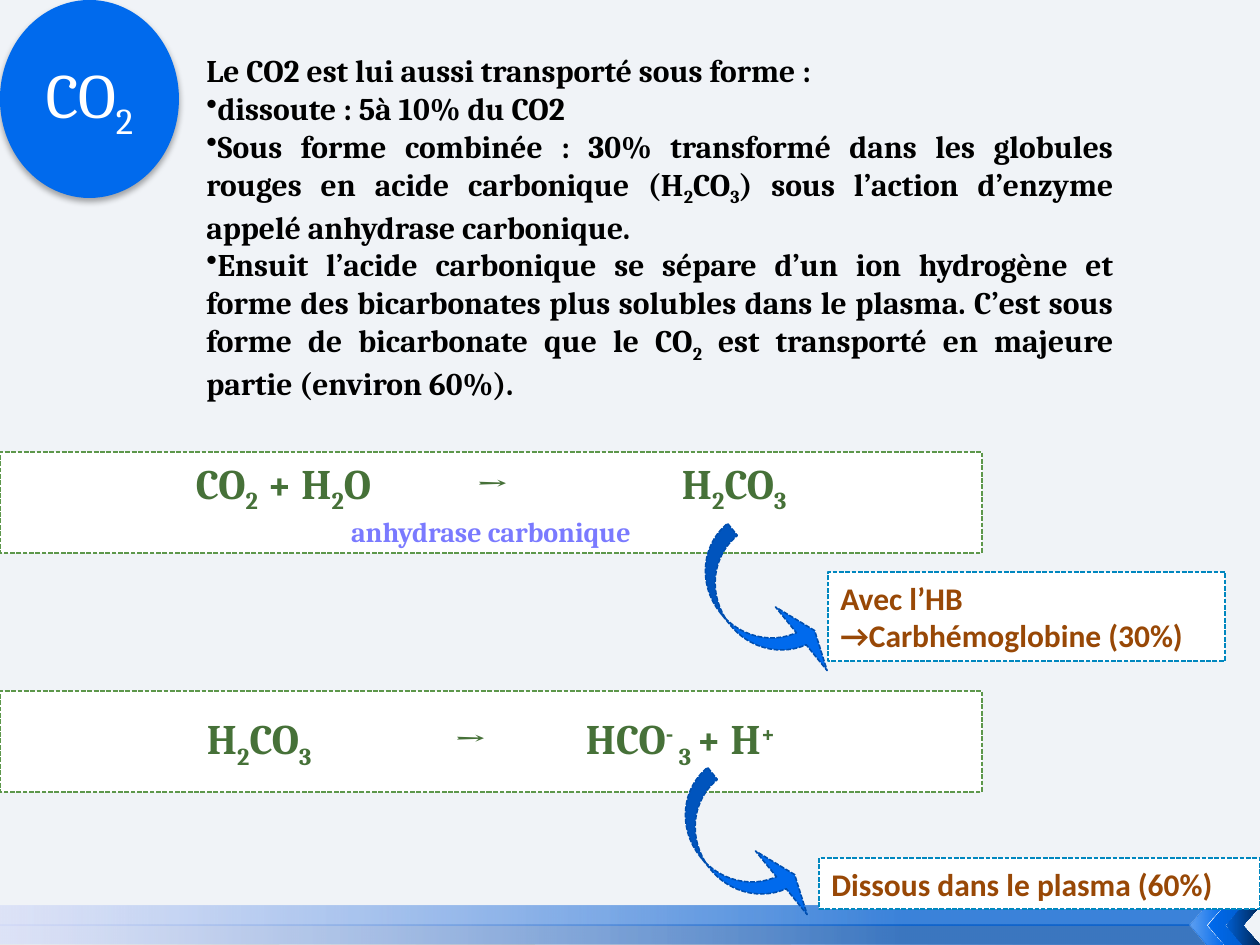
from dataclasses import dataclass
from typing import NamedTuple, Optional

from lxml import etree
from pptx import Presentation
from pptx import util as u
from pptx.dml.color import RGBColor
from pptx.enum import dml, shapes, text
from pptx.oxml import ns

EMU_PER_PX = 914400 / 126
PAGE_WIDTH, PAGE_HEIGHT = 1260, 945


@dataclass(frozen=True)
class Theme:
    page: str = "F0F3F7"
    white: str = "FFFFFF"
    ink: str = "000000"
    blue: str = "006AED"
    blue_mid: str = "005ED1"
    blue_dark: str = "004EAF"
    navy: str = "002757"
    pale: str = "CCD4F8"
    green: str = "467138"
    green_line: str = "5D974B"
    enzyme: str = "7A7AFF"
    brown: str = "984806"
    cyan_line: str = "0087BF"
    serif: str = "Cambria"
    sans: str = "Calibri"
    badge_size: int = 36
    equation_size: int = 24
    body_size: int = 18
    enzyme_size: int = 16


THEME = Theme()


class Rect(NamedTuple):
    left: int
    top: int
    width: int
    height: int


class Stop(NamedTuple):
    position: float
    color: str
    alpha: int = 100


class Ribbon(NamedTuple):
    outer_left: int
    outer_right: int
    color: str


class Equation(NamedTuple):
    rect: Rect
    formula: str
    tabs: tuple
    enzyme: Optional[str] = None


class Outcome(NamedTuple):
    rect: Rect
    label: str
    arrow: Rect


def px(value: float) -> u.Emu:
    return u.Emu(round(value * EMU_PER_PX))


def rgb(value: str) -> RGBColor:
    return RGBColor.from_string(value)


def add_element(parent, tag: str, **attributes):
    element = etree.SubElement(parent, ns.qn(tag))
    for name, value in attributes.items():
        element.set(name, str(value))
    return element


def add_shape(page, kind, rect: Rect, fill: Optional[str] = None,
              line: Optional[str] = None):
    shape = page.shapes.add_shape(kind, *map(px, rect))
    shape.shadow.inherit = False
    if fill:
        shape.fill.solid()
        shape.fill.fore_color.rgb = rgb(fill)
    if line:
        shape.line.color.rgb = rgb(line)
        shape.line.width = u.Pt(0.9)
        shape.line.dash_style = dml.MSO_LINE.SQUARE_DOT
    else:
        shape.line.fill.background()
    return shape


def set_gradient(shape, *stops: Stop) -> None:
    shape.fill.gradient()
    shape.fill.gradient_angle = 180
    for target, stop in zip(shape.fill.gradient_stops, stops):
        target.position = stop.position
        target.color.rgb = rgb(stop.color)
    for color, stop in zip(shape.element.spPr.iter(ns.qn("a:srgbClr")), stops):
        if stop.alpha < 100:
            add_element(color, "a:alpha", val=stop.alpha * 1000)


def set_frame(box, anchor=text.MSO_ANCHOR.MIDDLE):
    frame = box.text_frame
    frame.word_wrap = True
    frame.vertical_anchor = anchor
    return frame


def write(para, content: str, *, size: int, color: str, font: str = THEME.serif,
          bold: bool = True, align=text.PP_ALIGN.LEFT, bullet: bool = False,
          tabs: tuple = ()) -> None:
    """Bars separate spans; a span opening with _ is lowered, with ^ raised."""
    para.alignment = align
    properties = para._p.get_or_add_pPr()
    if bullet:
        add_element(properties, "a:buChar", char="•")
    if tabs:
        tab_list = add_element(properties, "a:tabLst")
        for tab in tabs:
            add_element(tab_list, "a:tab", pos=px(tab), algn="l")
    for piece in content.split("|"):
        baseline = {"_": -25000, "^": 30000}.get(piece[:1])
        span = para.add_run()
        span.text = piece[1:] if baseline else piece
        span.font.size = u.Pt(size)
        span.font.name = font
        span.font.bold = bold
        span.font.color.rgb = rgb(color)
        if baseline:
            span.font._element.set("baseline", str(baseline))


def draw_footer(page) -> None:
    for ribbon in (Ribbon(944, 945, THEME.blue_dark), Ribbon(906, 906, THEME.blue_mid)):
        builder = page.shapes.build_freeform(1207, ribbon.outer_right, EMU_PER_PX)
        builder.add_line_segments([(0, ribbon.outer_left), (0, 925), (1189, 925)])
        shape = builder.convert_to_shape()
        shape.shadow.inherit = False
        shape.line.fill.background()
        set_gradient(shape, Stop(0.25, ribbon.color, 75), Stop(1, THEME.pale, 50))

    chevrons = ((Stop(0, THEME.blue, 60), Stop(1, THEME.blue)),
                (Stop(0, THEME.blue), Stop(1, THEME.blue_mid)),
                (Stop(0, THEME.blue_mid), Stop(1, THEME.navy)))
    for index, stops in enumerate(chevrons):
        rect = Rect(1190 + 18 * index, 906, 34, 39)
        chevron = add_shape(page, shapes.MSO_SHAPE.CHEVRON, rect)
        chevron.element.spPr.xfrm.set("flipH", "1")
        set_gradient(chevron, *stops)


def draw_badge(page) -> None:
    badge = add_shape(page, shapes.MSO_SHAPE.OVAL, Rect(0, 0, 179, 198), THEME.blue)
    effects = badge.element.spPr.find(ns.qn("a:effectLst"))
    shadow = add_element(effects, "a:outerShdw", blurRad=u.Pt(3.5), dist=u.Pt(2.2),
                         dir=5400000, rotWithShape=0)
    add_element(add_element(shadow, "a:srgbClr", val=THEME.ink), "a:alpha", val=32000)
    write(set_frame(badge).paragraphs[0], "CO|_2", size=THEME.badge_size,
          color=THEME.white, bold=False, align=text.PP_ALIGN.CENTER)


def draw_body(page, lines: tuple) -> None:
    box = page.shapes.add_textbox(*map(px, Rect(194, 45, 932, 432)))
    frame = set_frame(box, text.MSO_ANCHOR.TOP)
    for index, line in enumerate(lines):
        para = frame.add_paragraph() if index else frame.paragraphs[0]
        write(para, line, size=THEME.body_size, color=THEME.ink,
              align=text.PP_ALIGN.JUSTIFY, bullet=index > 0)


def draw_equation(page, equation: Equation) -> None:
    box = add_shape(page, shapes.MSO_SHAPE.RECTANGLE, equation.rect,
                    THEME.white, THEME.green_line)
    frame = set_frame(box)
    frame.margin_left = frame.margin_right = 0
    write(frame.paragraphs[0], equation.formula, size=THEME.equation_size,
          color=THEME.green, tabs=equation.tabs)
    if equation.enzyme:
        write(frame.add_paragraph(), equation.enzyme, size=THEME.enzyme_size,
              color=THEME.enzyme, align=text.PP_ALIGN.CENTER)


def draw_outcome(page, outcome: Outcome) -> None:
    box = add_shape(page, shapes.MSO_SHAPE.RECTANGLE, outcome.rect,
                    THEME.white, THEME.cyan_line)
    write(set_frame(box).paragraphs[0], outcome.label, size=THEME.body_size,
          color=THEME.brown, font=THEME.sans)
    arrow = add_shape(page, shapes.MSO_SHAPE.CURVED_RIGHT_ARROW, outcome.arrow,
                      THEME.blue, THEME.blue_dark)
    arrow.rotation = 320.9
    for index, value in enumerate((0.25, 1.32, 0.25)):
        arrow.adjustments[index] = value


BODY = (
    "Le CO2 est lui aussi transporté sous forme\u00a0:",
    "dissoute : 5à 10% du CO2",
    "Sous forme combinée : 30% transformé dans les globules rouges en acide carbonique "
    "(H|_2|CO|_3|) sous l’action d’enzyme appelé anhydrase carbonique.",
    "Ensuit l’acide carbonique se sépare d’un ion hydrogène et forme des bicarbonates "
    "plus solubles dans le plasma. C’est sous forme de bicarbonate que le CO|_2| est "
    "transporté en majeure partie (environ 60%).",
)
EQUATIONS = (
    Equation(Rect(0, 452, 982, 101), "\tCO|_2| + H|_2|O\t→\tH|_2|CO|_3",
             (196, 476, 682), "anhydrase carbonique"),
    Equation(Rect(0, 691, 982, 101), "\tH|_2|CO|_3|\t→\tHCO|^- |_3 |+ H|^+",
             (207, 454, 586)),
)
OUTCOMES = (
    Outcome(Rect(828, 572, 397, 89), "Avec l’HB →Carbhémoglobine (30%)",
            Rect(729, 523, 62, 179)),
    Outcome(Rect(819, 858, 441, 51), "Dissous dans le plasma (60%)",
            Rect(709, 767, 62, 179)),
)


def main() -> None:
    deck = Presentation()
    deck.slide_width, deck.slide_height = px(PAGE_WIDTH), px(PAGE_HEIGHT)
    page = deck.slides.add_slide(deck.slide_layouts[6])
    page.background.fill.solid()
    page.background.fill.fore_color.rgb = rgb(THEME.page)

    # Footer, heading badge and explanation
    draw_footer(page)
    draw_badge(page)
    draw_body(page, BODY)

    # Reactions and where their products go
    for equation in EQUATIONS:
        draw_equation(page, equation)
    for outcome in OUTCOMES:
        draw_outcome(page, outcome)

    deck.save("out.pptx")


if __name__ == "__main__":
    main()
